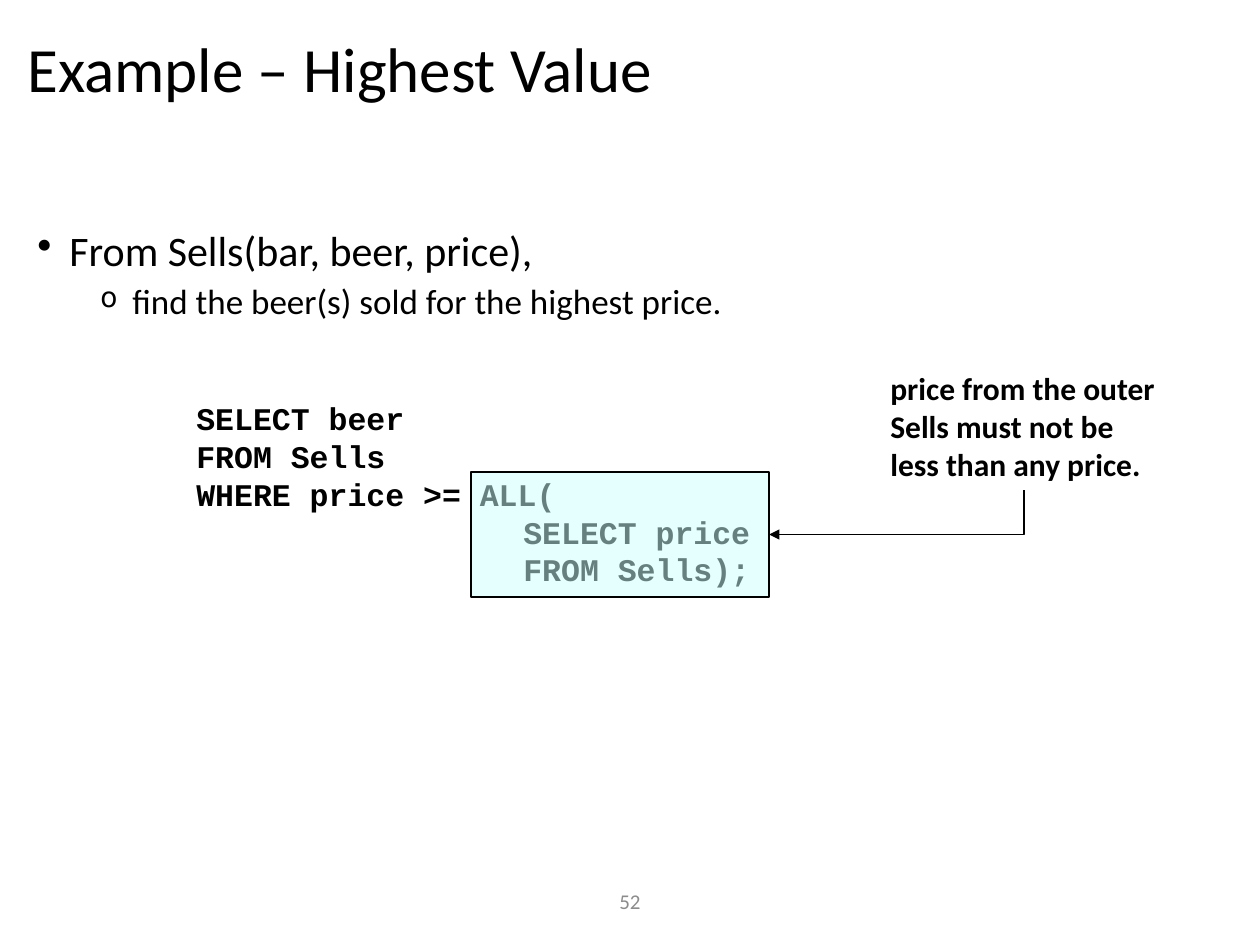
from dataclasses import dataclass

from lxml.etree import SubElement
from pptx import Presentation
from pptx.dml.color import RGBColor
from pptx.enum.shapes import MSO_CONNECTOR, MSO_SHAPE
from pptx.enum.text import MSO_ANCHOR, PP_ALIGN
from pptx.oxml.ns import qn
from pptx.util import Pt

TITLE = "Example – Highest Value"
TASK = [
    {"text": "From Sells(bar, beer, price),", "level": 0, "bullet": "•",
     "bullet_size": 100, "size": 24, "before": 10, "margin": 32},
    {"text": "find the beer(s) sold for the highest price.", "level": 1, "bullet": "o",
     "bullet_size": 80, "size": 20, "before": 5, "margin": 95},
]
NOTE = ["price from the outer", "Sells must not be", "less than any price."]
OUTER_QUERY = ["SELECT beer", "FROM Sells", "WHERE price >= ALL("]
SUBQUERY = ["SELECT price", "FROM Sells);"]
PAGE_NUMBER = "52"

TITLE_BOX = (15, 10, 1230, 125)
TASK_BOX = (25, 224, 1181, 129)
NOTE_BOX = (878, 363, 292, 127)
QUERY_BOX = (184, 393, 605, 204)
HIGHLIGHT_BOX = (471, 472, 298, 125)
PAGE_NUMBER_BOX = (417, 876, 426, 50)
SUBQUERY_INDENT = 327
BULLET_HANG = 32


@dataclass(frozen=True)
class Theme:
    ink: RGBColor = RGBColor(0x00, 0x00, 0x00)
    muted: RGBColor = RGBColor(0x8C, 0x8C, 0x8C)
    highlight: RGBColor = RGBColor(0xCC, 0xFF, 0xFF)
    highlight_opacity: int = 50
    body_font: str = "Calibri"
    code_font: str = "Courier New"
    title_size: int = 36
    label_size: int = 18
    number_size: int = 12
    line_width: float = 0.75


THEME = Theme()


def px(length):
    return round(length * 914400 / 126)


def add_text(slide, box, lines, size, font=THEME.body_font, color=THEME.ink,
             bold=False, wrap=True, anchor=MSO_ANCHOR.TOP):
    frame = slide.shapes.add_textbox(*map(px, box)).text_frame
    frame.word_wrap = wrap
    frame.vertical_anchor = anchor
    frame.text = "\n".join(lines)
    for paragraph in frame.paragraphs:
        for run in paragraph.runs:
            run.font.name = font
            run.font.size = Pt(size)
            run.font.bold = bold
            run.font.color.rgb = color
    return frame.paragraphs


def add_bullet(paragraph, item):
    paragraph.level = item["level"]
    paragraph.line_spacing = 0.9
    paragraph.space_before = Pt(item["before"])
    paragraph.runs[0].font.size = Pt(item["size"])
    properties = paragraph._p.get_or_add_pPr()
    properties.set("marL", str(px(item["margin"])))
    properties.set("indent", str(-px(BULLET_HANG)))
    SubElement(properties, qn("a:buSzPct"), val=str(item["bullet_size"] * 1000))
    SubElement(properties, qn("a:buChar"), char=item["bullet"])


def add_highlight(slide):
    highlight = slide.shapes.add_shape(MSO_SHAPE.RECTANGLE, *map(px, HIGHLIGHT_BOX))
    highlight.shadow.inherit = False
    highlight.fill.solid()
    highlight.fill.fore_color.rgb = THEME.highlight
    highlight.line.color.rgb = THEME.ink
    highlight.line.width = Pt(THEME.line_width)
    tint = highlight._element.spPr.find(qn("a:solidFill"))[0]
    SubElement(tint, qn("a:alpha"), val=str(THEME.highlight_opacity * 1000))


def add_note_arrow(slide):
    note_left, note_top, note_width, note_height = NOTE_BOX
    left, top, width, height = HIGHLIGHT_BOX
    start_x, start_y = note_left + note_width / 2, note_top + note_height
    end_x, end_y = left + width, top + height / 2
    center_x, center_y = (start_x + end_x) / 2, (start_y + end_y) / 2
    half_drop, half_span = (end_y - start_y) / 2, (start_x - end_x) / 2
    arrow = slide.shapes.add_connector(
        MSO_CONNECTOR.ELBOW,
        px(center_x - half_drop), px(center_y - half_span),
        px(center_x + half_drop), px(center_y + half_span))
    arrow.line.color.rgb = THEME.ink
    arrow.line.width = Pt(THEME.line_width)
    properties = arrow._element.spPr
    properties.find(qn("a:xfrm")).set("rot", str(90 * 60000))
    properties.find(qn("a:prstGeom")).set("prst", "bentConnector2")
    SubElement(properties.find(qn("a:ln")), qn("a:tailEnd"), type="triangle")
    SubElement(properties, qn("a:effectLst"))


def main():
    deck = Presentation()
    deck.slide_width, deck.slide_height = px(1260), px(945)
    slide = deck.slides.add_slide(deck.slide_layouts[6])

    page_number = add_text(slide, PAGE_NUMBER_BOX, [PAGE_NUMBER], THEME.number_size,
                           color=THEME.muted, anchor=MSO_ANCHOR.MIDDLE)
    page_number[0].alignment = PP_ALIGN.CENTER

    title = add_text(slide, TITLE_BOX, [TITLE], THEME.title_size, anchor=MSO_ANCHOR.MIDDLE)
    title[0].line_spacing = 0.9

    task = add_text(slide, TASK_BOX, [item["text"] for item in TASK], TASK[0]["size"])
    for paragraph, item in zip(task, TASK):
        add_bullet(paragraph, item)

    add_text(slide, NOTE_BOX, NOTE, THEME.label_size, bold=True, wrap=False)
    query = add_text(slide, QUERY_BOX, OUTER_QUERY + SUBQUERY, THEME.label_size,
                     font=THEME.code_font, bold=True)
    for paragraph in query[len(OUTER_QUERY):]:
        paragraph._p.get_or_add_pPr().set("marL", str(px(SUBQUERY_INDENT)))

    add_highlight(slide)
    add_note_arrow(slide)
    deck.save("out.pptx")


if __name__ == "__main__":
    main()
